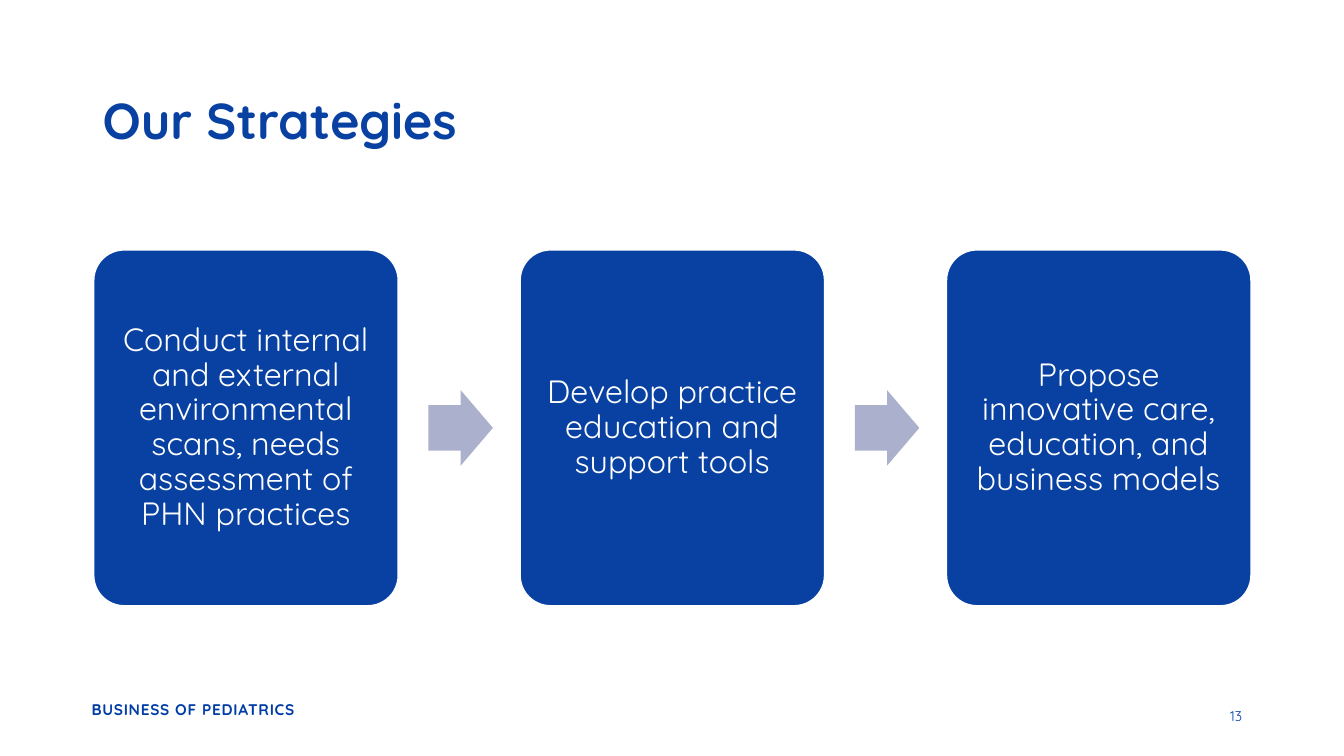
from dataclasses import dataclass, field

import pptx
import pptx.dml.color
import pptx.enum.shapes
import pptx.enum.text
import pptx.util

RGBColor = pptx.dml.color.RGBColor
Shapes = pptx.enum.shapes.MSO_SHAPE
Align = pptx.enum.text.PP_ALIGN
Anchor = pptx.enum.text.MSO_ANCHOR

BLUE = RGBColor(0x08, 0x41, 0xA1)
TITLE_BLUE = RGBColor(0x08, 0x41, 0xA2)
FOOTER_BLUE = RGBColor(0x00, 0x3D, 0xA6)
LAVENDER = RGBColor(0xAB, 0xB0, 0xCD)
WHITE = RGBColor(0xFF, 0xFF, 0xFF)

# Grid: 40 columns by 30 rows
SLIDE_WIDTH = pptx.util.Inches(13.33)
SLIDE_HEIGHT = pptx.util.Inches(7.5)
COLUMN = SLIDE_WIDTH / 40
ROW = SLIDE_HEIGHT / 30


@dataclass(frozen=True)
class Area:
    column: float
    row: float
    columns: float
    rows: float

    def emu(self) -> list[int]:
        return [round(self.column * COLUMN), round(self.row * ROW),
                round(self.columns * COLUMN), round(self.rows * ROW)]

    def shifted(self, columns: float) -> "Area":
        return Area(self.column + columns, self.row, self.columns, self.rows)


@dataclass(frozen=True)
class Label:
    text: str
    area: Area
    font: dict
    paragraph: dict = field(default_factory=dict)
    anchor: Anchor = Anchor.MIDDLE
    tracking: int = 0  # hundredths of a point


FIRST_CARD = Area(2.79, 9.92, 9.06, 14.12)
FIRST_ARROW = Area(12.75, 15.48, 1.92, 3)
CARD_PITCH = 12.69
CARD_FONT = {"size": 23, "color": WHITE}
CARD_PARAGRAPH = {"alignment": Align.CENTER, "line_spacing": 0.9}

STRATEGIES = [
    "Conduct internal and external environmental scans, needs assessment of PHN practices",
    "Develop practice education and support tools",
    "Propose innovative care, education, and business models",
]

LABELS = [
    Label("BUSINESS OF PEDIATRICS", Area(2.43, 27.6, 14.22, 1.16),
          {"size": 11, "bold": True, "color": FOOTER_BLUE},
          anchor=Anchor.TOP, tracking=50),
    Label("13", Area(28.26, 27.6, 9, 1.6),
          {"size": 10, "color": FOOTER_BLUE}, {"alignment": Align.RIGHT}),
    Label("Our Strategies", Area(2.76, 1.6, 34.5, 5.8),
          {"size": 36, "bold": True, "color": TITLE_BLUE}, {"line_spacing": 1.2}),
]


def write(shape, text: str, font: dict, paragraph_format: dict, anchor: Anchor,
          tracking: int = 0) -> None:
    frame = shape.text_frame
    frame.word_wrap = True
    frame.vertical_anchor = anchor
    paragraph = frame.paragraphs[0]
    for name, value in paragraph_format.items():
        setattr(paragraph, name, value)
    run = paragraph.add_run()
    run.text = text
    font_format = {"name": "Quicksand", "bold": False, **font}
    run.font.color.rgb = font_format.pop("color")
    font_format["size"] = pptx.util.Pt(font_format["size"])
    for name, value in font_format.items():
        setattr(run.font, name, value)
    if tracking:
        run.font._element.set("spc", str(tracking))


def add_block(slide, kind: Shapes, area: Area, fill: RGBColor, adjustments: list[float]):
    shape = slide.shapes.add_shape(kind, *area.emu())
    shape.shadow.inherit = False
    shape.fill.solid()
    shape.fill.fore_color.rgb = fill
    shape.line.fill.background()
    for index, value in enumerate(adjustments):
        shape.adjustments[index] = value
    return shape


def add_card(slide, text: str, area: Area) -> None:
    card = add_block(slide, Shapes.ROUNDED_RECTANGLE, area, BLUE, [0.1])
    card.line.color.rgb = WHITE
    card.line.width = pptx.util.Pt(1)
    for side in ("left", "top", "right", "bottom"):
        setattr(card.text_frame, f"margin_{side}", pptx.util.Inches(0.1))
    write(card, text, CARD_FONT, CARD_PARAGRAPH, Anchor.MIDDLE)


def main() -> None:
    presentation = pptx.Presentation()
    presentation.slide_width = SLIDE_WIDTH
    presentation.slide_height = SLIDE_HEIGHT
    slide = presentation.slides.add_slide(presentation.slide_layouts[6])

    # Title, footer and page number
    for label in LABELS:
        box = slide.shapes.add_textbox(*label.area.emu())
        write(box, label.text, label.font, label.paragraph, label.anchor, label.tracking)

    # Strategy cards with an arrow between neighbours
    for index, strategy in enumerate(STRATEGIES):
        offset = index * CARD_PITCH
        add_card(slide, strategy, FIRST_CARD.shifted(offset))
        if index < len(STRATEGIES) - 1:
            add_block(slide, Shapes.RIGHT_ARROW, FIRST_ARROW.shifted(offset),
                      LAVENDER, [0.6, 0.5])

    presentation.save("out.pptx")


if __name__ == "__main__":
    main()
